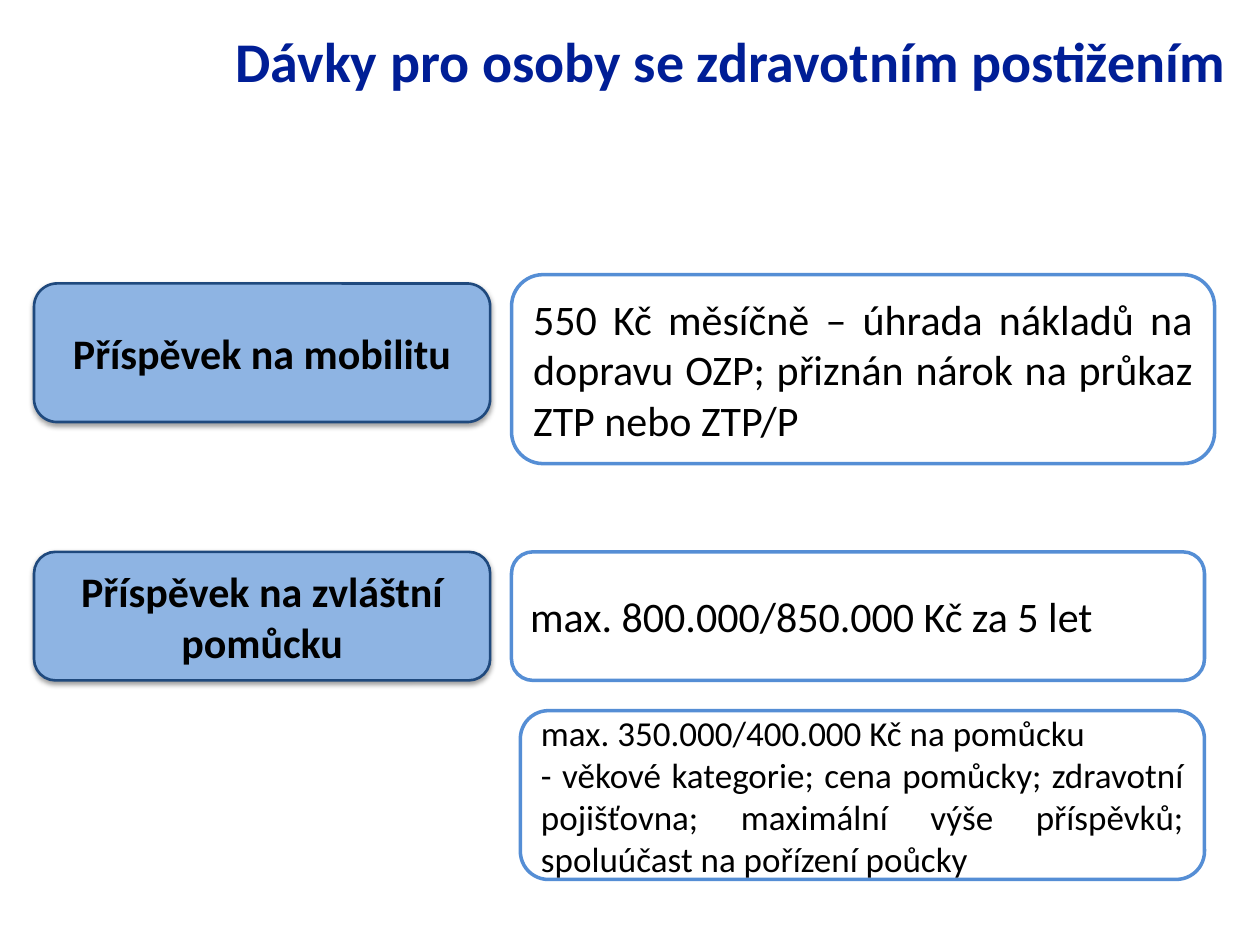
from dataclasses import dataclass

import lxml.etree
import pptx
import pptx.dml.color
import pptx.enum.shapes
import pptx.enum.text
import pptx.oxml.ns
import pptx.util
from pptx.util import Inches

RGBColor = pptx.dml.color.RGBColor
Align = pptx.enum.text.PP_ALIGN
qn = pptx.oxml.ns.qn

TITLE_BLUE = RGBColor(0x00, 0x1E, 0x96)
LABEL_FILL = RGBColor(0x8E, 0xB4, 0xE3)
LABEL_LINE = RGBColor(0x1F, 0x49, 0x7D)
DETAIL_LINE = RGBColor(0x55, 0x8E, 0xD5)
WHITE = RGBColor(0xFF, 0xFF, 0xFF)
BLACK = RGBColor(0x00, 0x00, 0x00)

LABEL_LEFT, LABEL_WIDTH = 0.27, 3.62
DETAIL_LEFT = 4.06


@dataclass(frozen=True)
class Style:
    fill: RGBColor
    line: RGBColor
    line_width: float
    align: Align
    bold: bool
    shadow: bool


@dataclass(frozen=True)
class Box:
    left: float
    top: float
    width: float
    height: float
    style: Style
    paragraphs: tuple[str, ...]
    size: int = 24


LABEL = Style(LABEL_FILL, LABEL_LINE, 1.5, Align.CENTER, bold=True, shadow=True)
DETAIL = Style(WHITE, DETAIL_LINE, 2, Align.JUSTIFY, bold=False, shadow=False)

BOXES = (
    Box(LABEL_LEFT, 2.25, LABEL_WIDTH, 1.1, LABEL, ("Příspěvek na mobilitu",)),
    Box(DETAIL_LEFT, 2.18, 5.58, 1.5, DETAIL,
        ("550 Kč měsíčně – úhrada nákladů na dopravu OZP; přiznán nárok na "
         "průkaz ZTP nebo ZTP/P",)),
    Box(LABEL_LEFT, 4.38, LABEL_WIDTH, 1.02, LABEL,
        ("Příspěvek na zvláštní pomůcku",)),
    Box(DETAIL_LEFT, 4.38, 5.5, 1.02, DETAIL,
        ("max. 800.000/850.000 Kč za 5 let",)),
    Box(4.13, 5.64, 5.43, 1.34, DETAIL,
        ("max. 350.000/400.000 Kč na pomůcku",
         "- věkové kategorie; cena pomůcky; zdravotní pojišťovna; maximální "
         "výše příspěvků; spoluúčast na pořízení poůcky"), size=20),
)


def write_text(frame, paragraphs: tuple[str, ...], *, size: int,
               color: RGBColor = BLACK, bold: bool = False,
               align: Align = Align.LEFT) -> None:
    frame.word_wrap = True
    for index, text in enumerate(paragraphs):
        paragraph = frame.paragraphs[0] if index == 0 else frame.add_paragraph()
        paragraph.alignment = align
        run = paragraph.add_run()
        run.text = text
        run.font.name = "Calibri"
        run.font.size = pptx.util.Pt(size)
        run.font.bold = bold
        run.font.color.rgb = color


def add_drop_shadow(shape) -> None:
    """Put a soft downward shadow into the shape's effect list."""
    effects = shape.element.spPr.find(qn("a:effectLst"))
    shadow = lxml.etree.SubElement(
        effects, qn("a:outerShdw"), blurRad=str(pptx.util.Pt(3.1)),
        dist=str(pptx.util.Pt(1.6)), dir="5400000", rotWithShape="0")
    color = lxml.etree.SubElement(shadow, qn("a:srgbClr"), val=str(BLACK))
    lxml.etree.SubElement(color, qn("a:alpha"), val="38000")


def draw_box(slide, box: Box) -> None:
    style = box.style
    shape = slide.shapes.add_shape(
        pptx.enum.shapes.MSO_SHAPE.ROUNDED_RECTANGLE, Inches(box.left),
        Inches(box.top), Inches(box.width), Inches(box.height))
    shape.fill.solid()
    shape.fill.fore_color.rgb = style.fill
    shape.line.color.rgb = style.line
    shape.line.width = pptx.util.Pt(style.line_width)
    shape.shadow.inherit = False
    if style.shadow:
        add_drop_shadow(shape)
    shape.text_frame.vertical_anchor = pptx.enum.text.MSO_ANCHOR.MIDDLE
    write_text(shape.text_frame, box.paragraphs, size=box.size,
               bold=style.bold, align=style.align)


def main() -> None:
    deck = pptx.Presentation()
    deck.slide_width, deck.slide_height = Inches(10), Inches(7.5)
    slide = deck.slides.add_slide(deck.slide_layouts[6])

    title = slide.shapes.add_textbox(
        Inches(1.77), Inches(0.16), Inches(8.11), Inches(0.64))
    write_text(title.text_frame, ("Dávky pro osoby se zdravotním postižením",),
               size=32, color=TITLE_BLUE, bold=True)
    for box in BOXES:
        draw_box(slide, box)
    deck.save("out.pptx")


if __name__ == "__main__":
    main()
